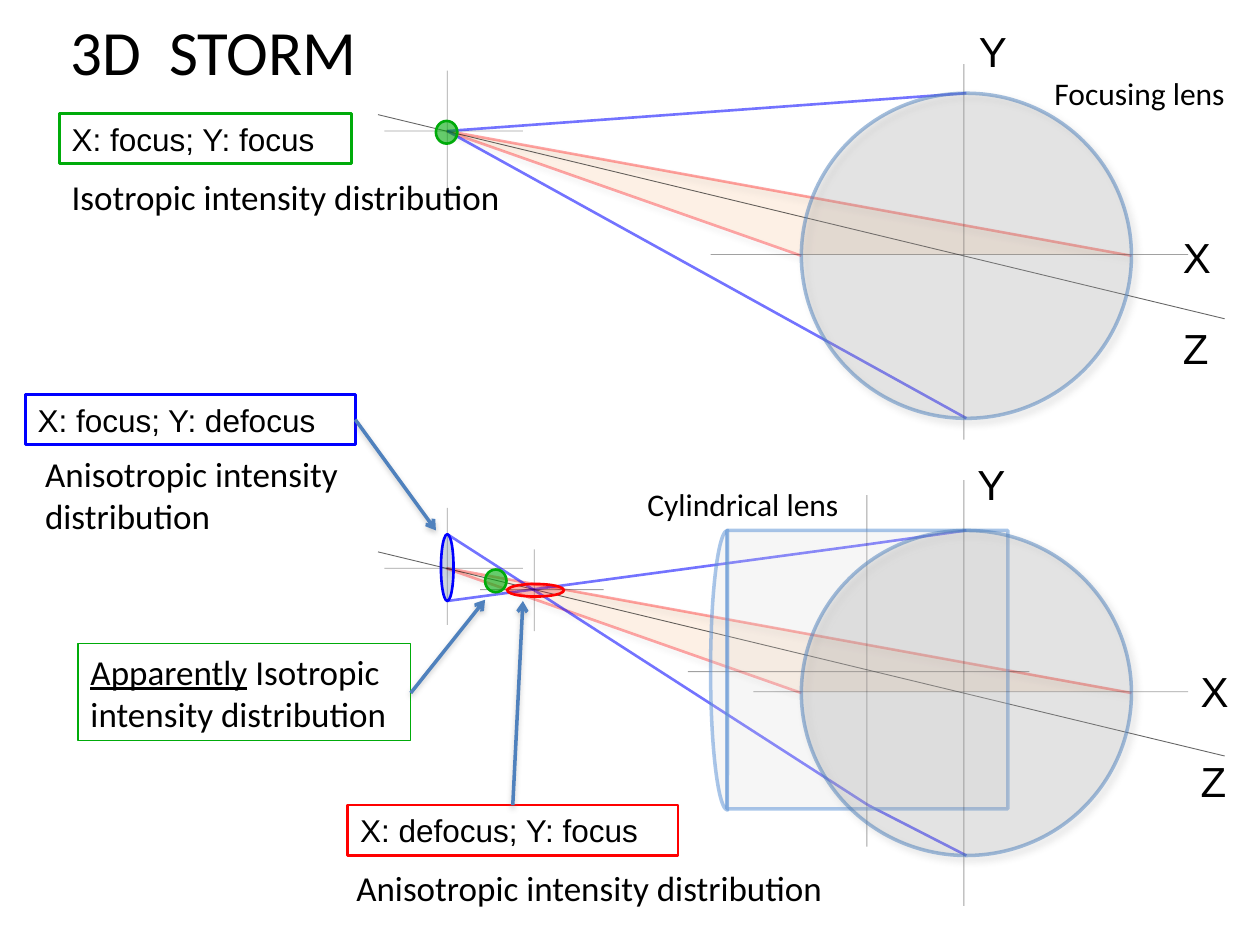
import pptx
import pptx.dml.color
import pptx.enum.shapes
import pptx.enum.text
import pptx.oxml
import pptx.oxml.ns
import pptx.util

Inches = pptx.util.Inches
RGBColor = pptx.dml.color.RGBColor
KIND = pptx.enum.shapes.MSO_SHAPE
NS = pptx.oxml.ns.nsdecls("a")
qn = pptx.oxml.ns.qn

BLACK = RGBColor(0x00, 0x00, 0x00)
WHITE = RGBColor(0xFF, 0xFF, 0xFF)
BLUE = RGBColor(0x00, 0x00, 0xFF)
RED = RGBColor(0xFF, 0x00, 0x00)
GREEN = RGBColor(0x00, 0xAB, 0x0A)
PEACH = RGBColor(0xFA, 0xC0, 0x90)
NAVY = RGBColor(0x1F, 0x49, 0x7D)
STEEL = RGBColor(0x4F, 0x81, 0xBD)
RIM = RGBColor(0x4A, 0x7E, 0xBB)
SKY = RGBColor(0x55, 0x8E, 0xD5)
GREY = RGBColor(0xA6, 0xA6, 0xA6)
PALE = RGBColor(0xD9, 0xD9, 0xD9)

# Lines are (colour, points, opacity %); fills are (colour, opacity %)
RAY_Y = (BLUE, 1.5, 54)
RAY_X = (RED, 1.5, 34)
AXIS = (BLACK, 0.5, 37)
DEPTH = (BLACK, 0.5, 60)
ARROW = (STEEL, 2, 100)
# Shadows are (opacity %, blur, distance, degrees)
SOFT = (38, 3.1, 1.6, 90)
DEEP = (43, 4, 3, 45)
DROP = 3.47  # from the upper setup to the lower one


class Slide:
    """Holds the current slide, the shapes being filled and the text style."""

    frame = {
        "word_wrap": True,
        "auto_size": pptx.enum.text.MSO_AUTO_SIZE.SHAPE_TO_FIT_TEXT,
        "vertical_anchor": pptx.enum.text.MSO_ANCHOR.TOP,
    }

    def __init__(self, deck):
        self.page = deck.slides.add_slide(deck.slide_layouts[6])
        self.shapes = self.page.shapes

    def group(self):
        self.shapes = self.page.shapes.add_group_shape().shapes

    def ungroup(self):
        self.shapes = self.page.shapes

    def fade(self, node, alpha):
        if alpha < 100:
            tint = node.find(".//" + qn("a:srgbClr"))
            tint.append(pptx.oxml.parse_xml(f'<a:alpha {NS} val="{alpha * 1000}"/>'))

    def paint(self, item, fill=None, line=None, shade=None):
        """Set fill, line and shadow of a shape or a connector."""
        props = item._element.spPr
        if fill:
            item.fill.solid()
            item.fill.fore_color.rgb = fill[0]
            self.fade(props.find(qn("a:solidFill")), fill[1])
        elif hasattr(item, "fill"):
            item.fill.background()
        if line:
            item.line.fill.solid()
            item.line.fill.fore_color.rgb = line[0]
            item.line.width = pptx.util.Pt(line[1])
            self.fade(props.find(qn("a:ln")), line[2])
        else:
            item.line.fill.background()
        cast = ""
        if shade:
            alpha, blur, dist, angle = shade
            cast = (f'<a:outerShdw blurRad="{round(blur * 12700)}" dist="{round(dist * 12700)}" '
                    f'dir="{angle * 60000}" rotWithShape="0"><a:srgbClr val="808080">'
                    f'<a:alpha val="{alpha * 1000}"/></a:srgbClr></a:outerShdw>')
        props.append(pptx.oxml.parse_xml(f"<a:effectLst {NS}>{cast}</a:effectLst>"))

    def line(self, start, end, look, shade=None, head=False):
        ends = [Inches(v) for v in (*start, *end)]
        item = self.shapes.add_connector(pptx.enum.shapes.MSO_CONNECTOR.STRAIGHT, *ends)
        self.paint(item, line=look, shade=shade)
        if head:
            stroke = item._element.spPr.find(qn("a:ln"))
            stroke.append(pptx.oxml.parse_xml(f'<a:tailEnd {NS} type="arrow"/>'))

    def shape(self, kind, box, fill=None, line=None, shade=None):
        item = self.shapes.add_shape(kind, *map(Inches, box))
        self.paint(item, fill, line, shade)
        return item

    def area(self, *spots):
        first, *rest = [tuple(map(Inches, spot)) for spot in spots]
        form = self.shapes.build_freeform(*first)
        form.add_line_segments(rest, close=True)
        self.paint(form.convert_to_shape(), (PEACH, 23))

    def letter(self, item, runs, size, face, wrap=True):
        """Put runs of (words, underline) into a shape."""
        for name, value in {**self.frame, "word_wrap": wrap}.items():
            setattr(item.text_frame, name, value)
        para = item.text_frame.paragraphs[0]
        para.alignment = pptx.enum.text.PP_ALIGN.LEFT
        for words, under in runs:
            run = para.add_run()
            run.text = words
            look = {"size": pptx.util.Pt(size), "name": face, "underline": under}
            for name, value in look.items():
                setattr(run.font, name, value)
            run.font.color.rgb = BLACK

    def text(self, box, words, size, face="Calibri", wrap=False):
        item = self.shapes.add_textbox(*map(Inches, box))
        self.letter(item, [(words, None)], size, face, wrap)

    def label(self, box, runs, color, fill=None, size=18, face="Arial", width=1.5):
        item = self.shape(KIND.RECTANGLE, box, fill, (color, width, 100))
        self.letter(item, runs, size, face)

    def spot(self, left, top):
        self.shape(KIND.OVAL, (left, top, 0.17, 0.18), (GREEN, 60), (GREEN, 1.5, 100))

    def beam(self, down):
        """Draw the X rays and the axes that both setups share."""
        near, far = 1.04 + down, 2.02 + down
        self.area((3.55, near), (6.36, far), (8.97, far))
        for start, end in (((3.55, near), (8.98, far + 0.01)), ((3.54, near), (6.36, far + 0.01))):
            self.line(start, end, RAY_X, SOFT)
        self.line((3, 0.91 + down), (9.72, 2.53 + down), DEPTH)
        self.line((3.55, 0.56 + down), (3.55, 1.49 + down), AXIS)
        self.line((3.05, near), (4.15, near), AXIS)

    def lens(self, down, left, top, foot):
        """Draw the lens and the axes through its centre."""
        self.line((left, 2.02 + down), (9.43, 2.02 + down), AXIS)
        self.line((7.65, top), (7.65, foot), AXIS)
        self.shape(KIND.OVAL, (6.36, 0.74 + down, 2.62, 2.58), (GREY, 20), (RIM, 2, 50), DEEP)


def main():
    deck = pptx.Presentation()
    deck.slide_width, deck.slide_height = Inches(10), Inches(7.5)
    slide = Slide(deck)

    # Upper setup: round lens only
    slide.group()
    slide.beam(0)
    for end in (0.74, 3.32):
        slide.line((3.55, 1.04), (7.67, end), RAY_Y)
    slide.spot(3.46, 0.96)
    slide.lens(0, 5.64, 0.51, 3.49)

    # Lower setup: cylinder in front of the lens
    slide.group()
    slide.beam(DROP)
    for spots in (((3.55, 4.77), (6.89, 4.32), (7.67, 4.21)),
                  ((3.55, 4.24), (6.89, 6.39), (7.67, 6.79))):
        for start, end in zip(spots, spots[1:]):
            slide.line(start, end, RAY_Y)
    for start, end in (((5.46, 5.33), (8.17, 5.33)), ((6.88, 3.93), (6.88, 6.72)),
                       ((4.24, 4.36), (4.24, 5.01)), ((3.81, 4.68), (4.79, 4.68))):
        slide.line(start, end, AXIS)
    glass = (PALE, 21), (SKY, 2, 50)
    chord = slide.shape(KIND.CHORD, (5.64, 4.21, 0.27, 2.22), *glass)
    chord.adjustments[0], chord.adjustments[1] = 54.03, 162
    slide.shape(KIND.RECTANGLE, (5.77, 4.21, 2.23, 2.21), *glass)
    flat = slide.shape(KIND.OVAL, (4.2, 4.46, 0.1, 0.45), (RED, 23), (RED, 1.5, 100))
    flat.rotation = 90
    slide.shape(KIND.OVAL, (3.5, 4.24, 0.1, 0.53), (NAVY, 23), (BLUE, 1.5, 100))
    slide.lens(DROP, 5.98, 3.81, 7.19)
    slide.ungroup()
    slide.spot(3.85, 4.52)

    for name, left, top in (("Z", 9.29, 2.51), ("X", 9.29, 1.79), ("Y", 7.67, 0.15),
                            ("Z", 9.43, 5.95), ("X", 9.43, 5.23), ("Y", 7.66, 3.59)):
        slide.text((left, top, 0.41 if name == "Z" else 0.43, 0.51), name, 24, "Arial")

    for box, words, color, fill in (
            ((0.2, 3.13, 2.62, 0.4), "X: focus; Y: defocus", BLUE, (WHITE, 100)),
            ((2.76, 6.39, 2.62, 0.4), "X: defocus; Y: focus", RED, None),
            ((0.47, 0.9, 2.32, 0.4), "X: focus; Y: focus", GREEN, (WHITE, 100))):
        slide.label(box, [(words, None)], color, fill)
    slide.label((0.62, 5.11, 2.64, 0.77),
                [("Apparently", True), (" Isotropic intensity distribution", None)],
                GREEN, size=20, face="Calibri", width=0.75)

    for start, end in (((2.82, 3.33), (3.46, 4.21)), ((3.26, 5.5), (3.85, 4.76)),
                       ((4.07, 6.39), (4.15, 4.77))):
        slide.line(start, end, ARROW, SOFT, head=True)

    slide.text((8.27, 0.54, 1.57, 0.4), "Focusing lens", 18)
    slide.text((5.04, 3.8, 1.73, 0.4), "Cylindrical lens", 18)
    slide.text((0.47, 1.34, 3.62, 0.44), "Isotropic intensity distribution", 20)
    for box in ((0.26, 3.54, 2.73, 0.77), (2.73, 6.83, 3.94, 0.44)):
        slide.text(box, "Anisotropic intensity distribution", 20, wrap=True)
    slide.text((0.46, 0.05, 8.43, 0.71), "3D  STORM", 36, wrap=True)
    deck.save("out.pptx")


if __name__ == "__main__":
    main()
